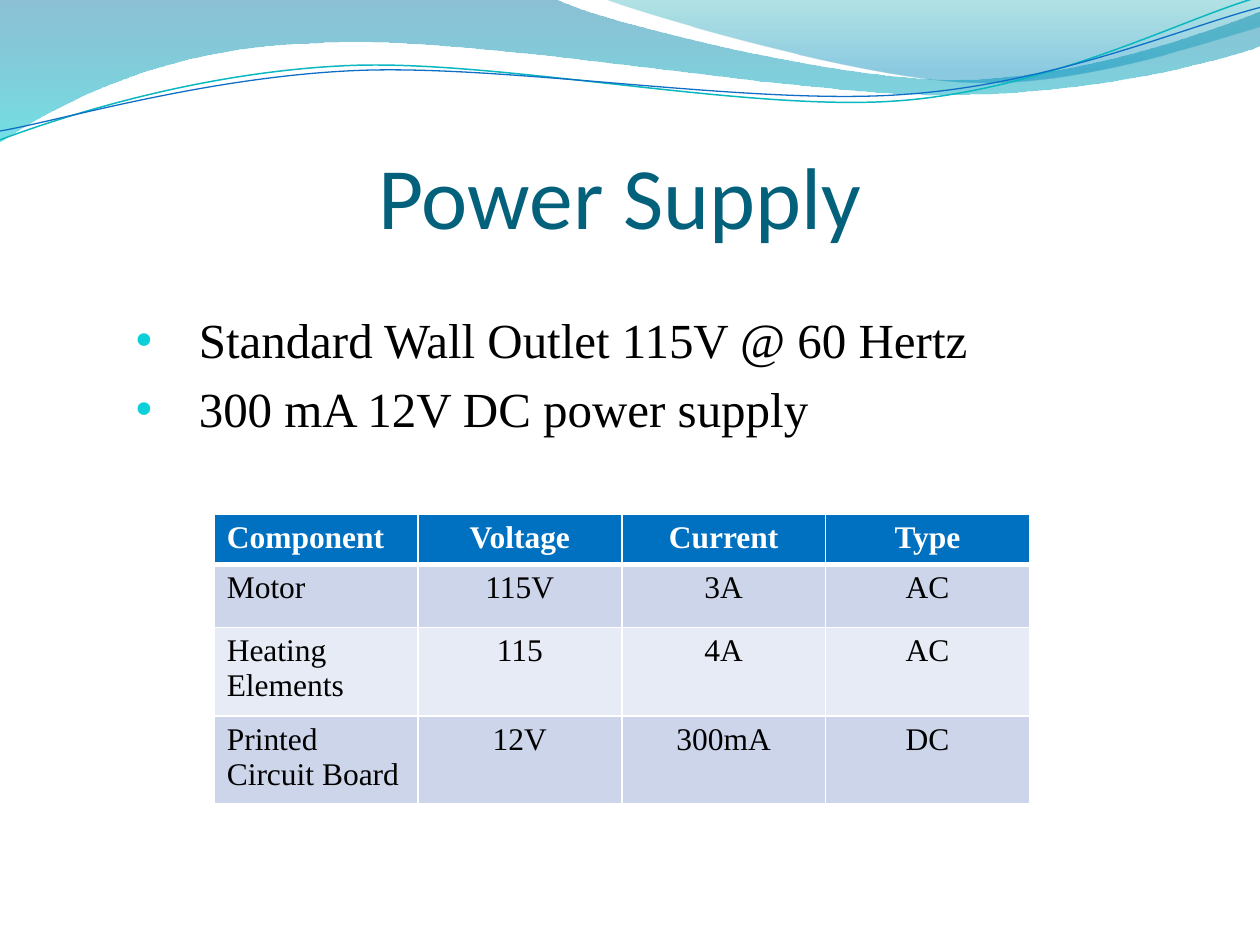
"""Build the Power Supply slide: wave header, two bullets and a table."""
import math

import lxml.etree
import pptx
import pptx.dml.color
import pptx.enum.text
import pptx.oxml
import pptx.oxml.ns
import pptx.util

WIDE, HIGH = 10, 7.5
TITLE = "Power Supply"
ITEMS = ["Standard Wall Outlet 115V @ 60 Hertz", "300 mA 12V DC power supply"]
ROWS = [
    ("Component", "Voltage", "Current", "Type"),
    ("Motor", "115V", "3A", "AC"),
    ("Heating Elements", "115", "4A", "AC"),
    ("Printed Circuit Board", "12V", "300mA", "DC"),
]
TALL = [0.28, 0.5, 0.53, 0.5]
FILLS = ["0070C0", "CCD5EA", "E7EBF5", "CCD5EA"]
SERIF = "Times New Roman"
TILT = -2.7

# Each part holds one end point, or two control points and an end point.
BANDS = [
    dict(start=(0, 0), stops=[(0, "0074A1", 45), (1, "00C6CF", 55)], parts=[
        (4.4, -0.01), (4.76, 0.17, 6.64, 0.63, 7.58, 0.63),
        (8.53, 0.63, 9.58, 0.26, 10, 0.09), (10.01, 0.36),
        (9.83, 0.44, 8.7, 0.76, 7.46, 0.75), (6.22, 0.75, 3.82, 0.28, 2.57, 0.34),
        (1.29, 0.36, 0.46, 0.83, -0.01, 1.13), (0, 0)]),
    dict(start=(4.79, -0.01), stops=[(0, "00A1A9", 30), (0.8, "008BBF", 45)], parts=[
        (5.09, 0.11, 6.82, 0.62, 7.69, 0.65), (8.56, 0.69, 9.61, 0.32, 10, 0.21),
        (10, 0), (4.79, -0.01)]),
]
LINES = [
    dict(start=(0, 1.11), line=("0AB8BF", 0.85), mid=(4.99, 0.58), parts=[
        (0.48, 0.93, 1.58, 0.57, 2.77, 0.52), (3.95, 0.47, 5.93, 0.89, 7.13, 0.8),
        (8.33, 0.71, 9.38, 0.15, 9.98, -0.02)]),
    dict(start=(0, 1.04), line=("0F6FC6", 0.75), mid=(5, 0.59), parts=[
        (0.47, 0.96, 1.64, 0.61, 2.83, 0.56), (4.03, 0.51, 5.97, 0.84, 7.17, 0.75),
        (8.36, 0.67, 9.41, 0.21, 10, 0.06)]),
]

inch, pt = pptx.util.Inches, pptx.util.Pt
align, anchor = pptx.enum.text.PP_ALIGN, pptx.enum.text.MSO_ANCHOR
qn = pptx.oxml.ns.qn


def color(code):
    return pptx.dml.color.RGBColor.from_string(code)


def style(thing, **form):
    for name, value in form.items():
        setattr(thing, name, value)


def write(para, text, code, **form):
    run = para.add_run()
    run.text = text
    style(run.font, **form)
    run.font.color.rgb = color(code)


def add_xml(home, text):
    space = pptx.oxml.ns.nsdecls("a")
    home.append(pptx.oxml.parse_xml(text.replace(" ", f" {space} ", 1)))


def turn(spot, mid, angle):
    """Rotate a point about a centre."""
    x, y = spot[0] - mid[0], spot[1] - mid[1]
    cos, sin = math.cos(math.radians(angle)), math.sin(math.radians(angle))
    return mid[0] + x * cos - y * sin, mid[1] + x * sin + y * cos


def bend(shape, parts):
    """Join each run of three line points into one Bézier curve."""
    legs = iter(list(shape.element.iter(qn("a:lnTo"))))
    for part in parts:
        first = next(legs)
        if len(part) == 6:
            first.tag = qn("a:cubicBezTo")
            for leg in (next(legs), next(legs)):
                first.append(leg[0])
                leg.getparent().remove(leg)


def add_wave(shapes, start, parts, stops=None, line=None, mid=None):
    spots = [start] + [part[i:i + 2] for part in parts for i in range(0, len(part), 2)]
    if mid:
        spots = [turn(spot, mid, -TILT) for spot in spots]
    spots = [(inch(x), inch(y)) for x, y in spots]
    pen = shapes.build_freeform(*spots[0], scale=1.0)
    pen.add_line_segments(spots[1:], close=bool(stops))
    wave = pen.convert_to_shape()
    bend(wave, parts)
    wave.shadow.inherit = False
    if line:
        wave.rotation = TILT
        wave.fill.background()
        wave.line.color.rgb = color(line[0])
        wave.line.width = pt(line[1])
        return
    wave.line.fill.background()
    wave.fill.gradient()
    wave.fill.gradient_angle = 270
    for stop, (spot, code, _) in zip(wave.fill.gradient_stops, stops):
        stop.position = spot
        stop.color.rgb = color(code)
    tints = wave.element.spPr.iter(qn("a:srgbClr"))
    for tint, (_, _, share) in zip(tints, stops):
        add_xml(tint, f'<a:alpha val="{share * 1000}"/>')


def add_title(slide):
    title = slide.shapes.title
    style(title, left=inch(0.67), top=inch(1.08), width=inch(8.5), height=inch(1.61))
    style(title.text_frame, vertical_anchor=anchor.TOP, margin_top=inch(0.05),
          auto_size=pptx.enum.text.MSO_AUTO_SIZE.NONE)
    para = title.text_frame.paragraphs[0]
    para.alignment = align.CENTER
    write(para, TITLE, "04617B", size=pt(50), name="Calibri")
    para.add_line_break()


def add_list(slide):
    frame = slide.shapes.add_textbox(*map(inch, (0.98, 2.41, 8.74, 1.09))).text_frame
    frame.word_wrap = True
    for i, item in enumerate(ITEMS):
        para = frame.add_paragraph() if i else frame.paragraphs[0]
        para.space_before = pt(5.6)
        write(para, item, "000000", size=pt(28), name=SERIF)
        prop = para._p.get_or_add_pPr()
        prop.set("marL", str(inch(0.5)))
        prop.set("indent", str(inch(-0.5)))
        add_xml(prop, '<a:buClr ><a:srgbClr val="0BD0D9"/></a:buClr>')
        add_xml(prop, '<a:buSzPct val="95000"/>')
        add_xml(prop, '<a:buFont typeface="Arial"/>')
        add_xml(prop, '<a:buChar char="•"/>')


def add_grid(slide):
    place = map(inch, (1.7, 4.08, 6.47, 2.3))
    frame = slide.shapes.add_table(len(ROWS), len(ROWS[0]), *place)
    table = frame.table
    for r, words in enumerate(ROWS):
        table.rows[r].height = inch(TALL[r])
        for c, word in enumerate(words):
            cell = table.cell(r, c)
            for side in "LRTB":
                thick = 3 if (r, side) == (0, "B") else 1
                add_xml(cell._tc.get_or_add_tcPr(),
                        f'<a:ln{side} w="{pt(thick)}"><a:solidFill><a:srgbClr '
                        f'val="FFFFFF"/></a:solidFill></a:ln{side}>')
            cell.fill.solid()
            cell.fill.fore_color.rgb = color(FILLS[r])
            para = cell.text_frame.paragraphs[0]
            para.alignment = align.CENTER if c else align.LEFT
            write(para, word, "000000" if r else "FFFFFF",
                  size=pt(18), name=SERIF, bold=r == 0)
    frame.height = inch(2.3)


def main():
    deck = pptx.Presentation()
    style(deck, slide_width=inch(WIDE), slide_height=inch(HIGH))
    slide = deck.slides.add_slide(deck.slide_layouts[5])
    for band in BANDS:
        add_wave(slide.shapes, **band)
    group = slide.shapes.add_group_shape()
    for line in LINES:
        add_wave(group.shapes, **line)
    add_title(slide)
    add_list(slide)
    add_grid(slide)
    deck.save("out.pptx")


if __name__ == "__main__":
    main()
